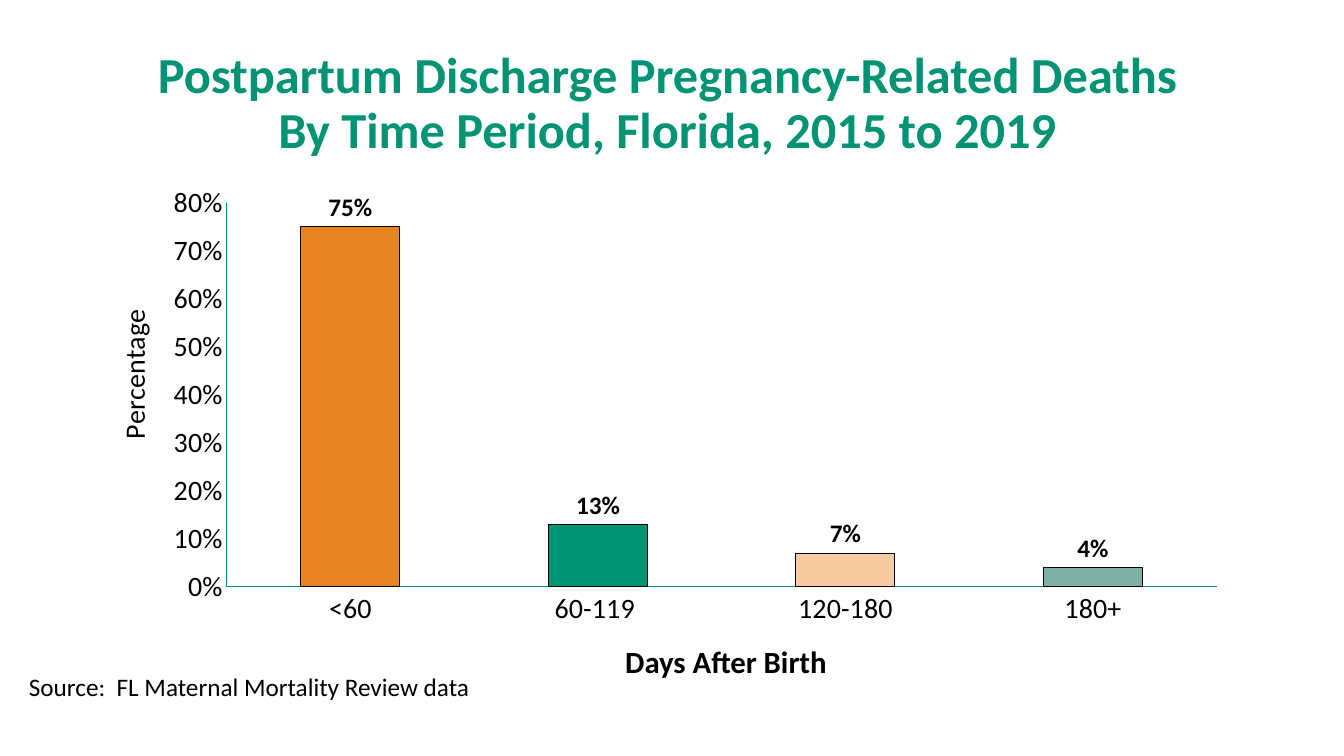
from lxml.etree import SubElement
from pptx import Presentation
from pptx.chart.data import CategoryChartData
from pptx.dml.color import RGBColor
from pptx.enum.chart import XL_CHART_TYPE, XL_LABEL_POSITION, XL_TICK_MARK
from pptx.enum.text import MSO_ANCHOR, PP_ALIGN
from pptx.oxml.ns import qn
from pptx.util import Cm, Pt

TITLE_LINES = ["Postpartum Discharge Pregnancy-Related Deaths",
               "By Time Period, Florida, 2015 to 2019"]
VALUE_TITLE = "Percentage"
CATEGORY_TITLE = "Days After Birth"
SOURCE = "Source:  FL Maternal Mortality Review data"

GREEN = RGBColor(0x00, 0x93, 0x74)
ORANGE = RGBColor(0xE6, 0x84, 0x22)
PEACH = RGBColor(0xF6, 0xCB, 0xA0)
SAGE = RGBColor(0x7E, 0xB0, 0xA6)
BLACK = RGBColor(0x00, 0x00, 0x00)
FONT = "Calibri"

DEATHS = [("<60", 0.75, ORANGE), ("60-119 ", 0.13, GREEN),
          ("120-180", 0.07, PEACH), ("180+", 0.04, SAGE)]


def set_font(font, size, color=BLACK, bold=False):
    font.name = FONT
    font.size = Pt(size)
    font.bold = bold
    font.color.rgb = color


def add_text(slide, box, lines, size, color=BLACK, bold=False,
             align=PP_ALIGN.LEFT, anchor=MSO_ANCHOR.TOP, spacing=1.0):
    shape = slide.shapes.add_textbox(*map(Cm, box))
    frame = shape.text_frame
    frame.word_wrap = True
    frame.vertical_anchor = anchor
    paragraph = frame.paragraphs[0]
    paragraph.alignment = align
    paragraph.line_spacing = spacing
    for index, line in enumerate(lines):
        if index:
            paragraph.add_line_break()
        run = paragraph.add_run()
        run.text = line
        set_font(run.font, size, color, bold)


def place(element, index, **settings):
    for old in element.findall(qn("c:layout")):
        element.remove(old)
    layout = SubElement(element, qn("c:layout"))
    element.insert(index, layout)
    manual = SubElement(layout, qn("c:manualLayout"))
    for name, value in settings.items():
        SubElement(manual, qn(f"c:{name}")).set("val", str(value))


def add_deaths_chart(slide):
    data = CategoryChartData(number_format="0%")
    data.categories = [period for period, _, _ in DEATHS]
    data.add_series("Series 1", [share for _, share, _ in DEATHS])
    frame = slide.shapes.add_chart(XL_CHART_TYPE.COLUMN_CLUSTERED, Cm(1.83), Cm(4.47),
                                   Cm(30.58), Cm(12.27), data)
    chart = frame.chart
    chart.has_legend = False
    chart.has_title = False
    set_font(chart.font, 10, GREEN)

    for axis in (chart.category_axis, chart.value_axis):
        axis.has_major_gridlines = False
        axis.major_tick_mark = axis.minor_tick_mark = XL_TICK_MARK.NONE
        axis.format.line.color.rgb = GREEN
        axis.format.line.width = Pt(0.75)
        set_font(axis.tick_labels.font, 20)

    value_axis = chart.value_axis
    value_axis.minimum_scale = 0
    value_axis.maximum_scale = 0.8
    value_axis.major_unit = 0.1
    value_axis.tick_labels.number_format = "0%"
    value_axis.tick_labels.number_format_is_linked = False
    title = value_axis.axis_title
    run = title.text_frame.paragraphs[0].add_run()
    run.text = VALUE_TITLE
    set_font(run.font, 20)

    plot = chart.plots[0]
    plot.gap_width = 150
    plot.vary_by_categories = False
    series = plot.series[0]
    for index, (_, _, color) in enumerate(DEATHS):
        bar = series.points[index].format
        bar.fill.solid()
        bar.fill.fore_color.rgb = color
        bar.line.color.rgb = BLACK
        bar.line.width = Pt(0.75)
    labels = series.data_labels
    labels.show_value = True
    labels.position = XL_LABEL_POSITION.OUTSIDE_END
    labels.number_format = "0%"
    labels.number_format_is_linked = False
    set_font(labels.font, 18, bold=True)

    plot_area = chart.element.find(f".//{qn('c:plotArea')}")
    place(plot_area, 0, layoutTarget="inner", xMode="edge", yMode="edge",
          x=0.127, y=0.052, w=0.816, h=0.789)
    title_element = plot_area.find(f"{qn('c:valAx')}/{qn('c:title')}")
    place(title_element, 1, xMode="edge", yMode="edge", x=0.03, y=0.26)


def main():
    presentation = Presentation()
    presentation.slide_width = Cm(33.87)
    presentation.slide_height = Cm(19.05)
    slide = presentation.slides.add_slide(presentation.slide_layouts[6])
    add_text(slide, (2.11, 1.32, 29.44, 2.64), TITLE_LINES, 36, GREEN, True,
             PP_ALIGN.CENTER, MSO_ANCHOR.MIDDLE, 0.9)
    add_deaths_chart(slide)
    add_text(slide, (15.32, 16.08, 5.95, 1.19), [CATEGORY_TITLE], 22, bold=True,
             align=PP_ALIGN.CENTER)
    add_text(slide, (0.48, 16.79, 12.22, 1.8), [SOURCE], 18)
    presentation.save("out.pptx")


if __name__ == "__main__":
    main()
